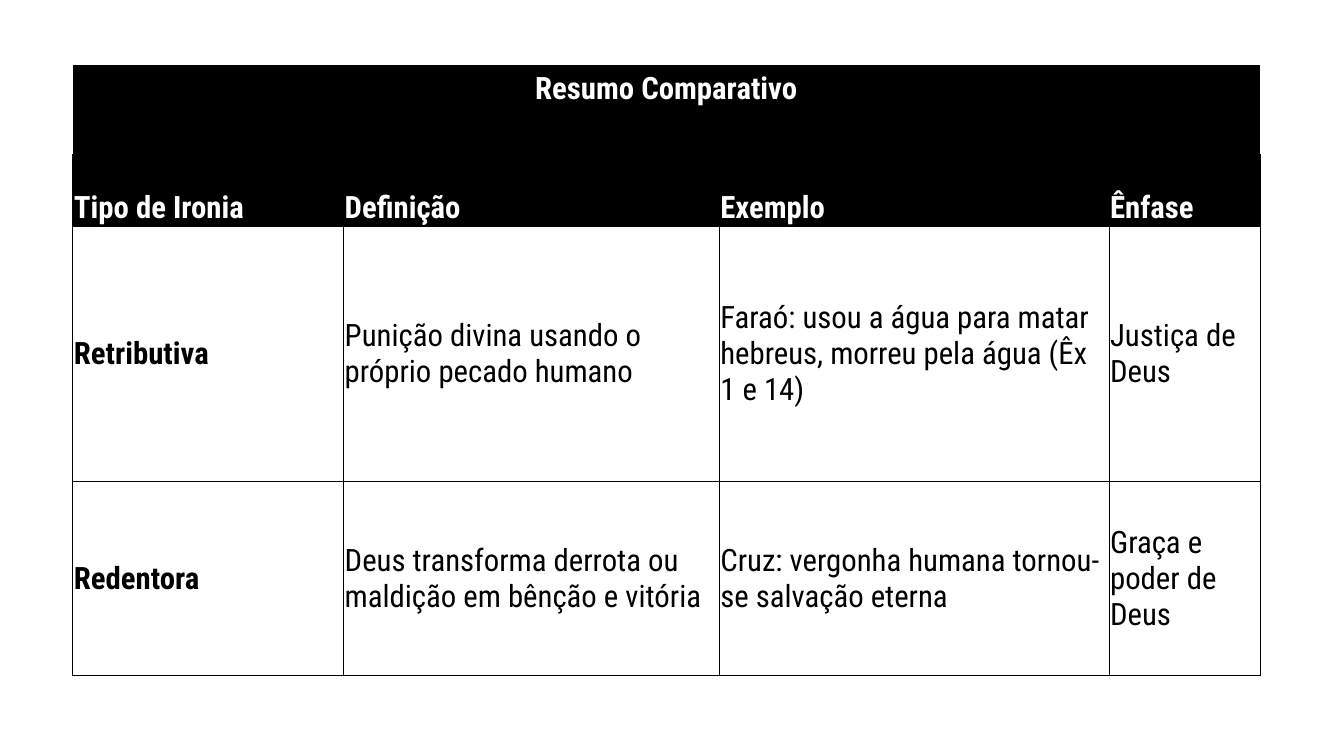
"""Build a slide with a table that compares two types of irony."""
from lxml import etree
from pptx import Presentation
from pptx.dml.color import RGBColor
from pptx.enum.text import MSO_ANCHOR, PP_ALIGN
from pptx.oxml.ns import qn
from pptx.util import Inches, Pt

TOP, MIDDLE, BOTTOM = MSO_ANCHOR.TOP, MSO_ANCHOR.MIDDLE, MSO_ANCHOR.BOTTOM
LEFT, CENTER = PP_ALIGN.LEFT, PP_ALIGN.CENTER

TITLE = "Resumo Comparativo"
HEADS = ["Tipo de Ironia", "Definição", "Exemplo", "Ênfase"]
BODY = [
    ["Retributiva", "Punição divina usando o próprio pecado humano",
     "Faraó: usou a água para matar hebreus, morreu pela água (Êx 1 e 14)",
     "Justiça de Deus"],
    ["Redentora", "Deus transforma derrota ou maldição em bênção e vitória",
     "Cruz: vergonha humana tornou-se salvação eterna",
     "Graça e poder de Deus"],
]
THEME = {"font": "Roboto Condensed", "size": 33, "dark": "000000",
         "light": "FFFFFF", "line": 0.5}
SLIDE = (20, 11.25)
ORIGIN = (1.08, 0.96)
COLS = [4.03, 5.59, 5.8, 2.25]
ROWS = [1.34, 1.06, 3.8, 2.89]
WIDE = (0.18, 0.09, 0.18, 0.09)
TIGHT = (0.02, 0.02, 0.02, 0)


def border(cell, sides):
    props = cell._tc.get_or_add_tcPr()
    for spot, side in enumerate(sides):
        line = etree.Element(qn(f"a:ln{side}"), w=str(Pt(THEME["line"])))
        fill = etree.SubElement(line, qn("a:solidFill"))
        etree.SubElement(fill, qn("a:srgbClr"), val=THEME["dark"])
        props.insert(spot, line)


def style(cell, text, head, bold, anchor, align=LEFT, pad=TIGHT, sides="LRTB"):
    cell.text = text
    cell.vertical_anchor = anchor
    (cell.margin_left, cell.margin_top,
     cell.margin_right, cell.margin_bottom) = map(Inches, pad)
    if head:
        cell.fill.solid()
        cell.fill.fore_color.rgb = RGBColor.from_string(THEME["dark"])
    else:
        cell.fill.background()
    para = cell.text_frame.paragraphs[0]
    para.alignment = align
    font = para.font
    font.name, font.size, font.bold = THEME["font"], Pt(THEME["size"]), bold
    font.color.rgb = RGBColor.from_string(THEME["light" if head else "dark"])
    border(cell, sides)


def main():
    deck = Presentation()
    deck.slide_width, deck.slide_height = map(Inches, SLIDE)
    slide = deck.slides.add_slide(deck.slide_layouts[6])
    area = map(Inches, (*ORIGIN, sum(COLS), sum(ROWS)))
    table = slide.shapes.add_table(len(ROWS), len(COLS), *area).table
    table.first_row = table.horz_banding = False
    for col, width in zip(table.columns, COLS):
        col.width = Inches(width)
    for row, height in zip(table.rows, ROWS):
        row.height = Inches(height)

    table.cell(0, 0).merge(table.cell(0, len(COLS) - 1))
    style(table.cell(0, 0), TITLE, True, True, TOP, CENTER, WIDE, "B")
    for r, texts in enumerate([HEADS, *BODY], 1):
        head = r == 1
        for c, text in enumerate(texts):
            style(table.cell(r, c), text, head, head or c == 0,
                  BOTTOM if head else MIDDLE)
    deck.save("out.pptx")


if __name__ == "__main__":
    main()
